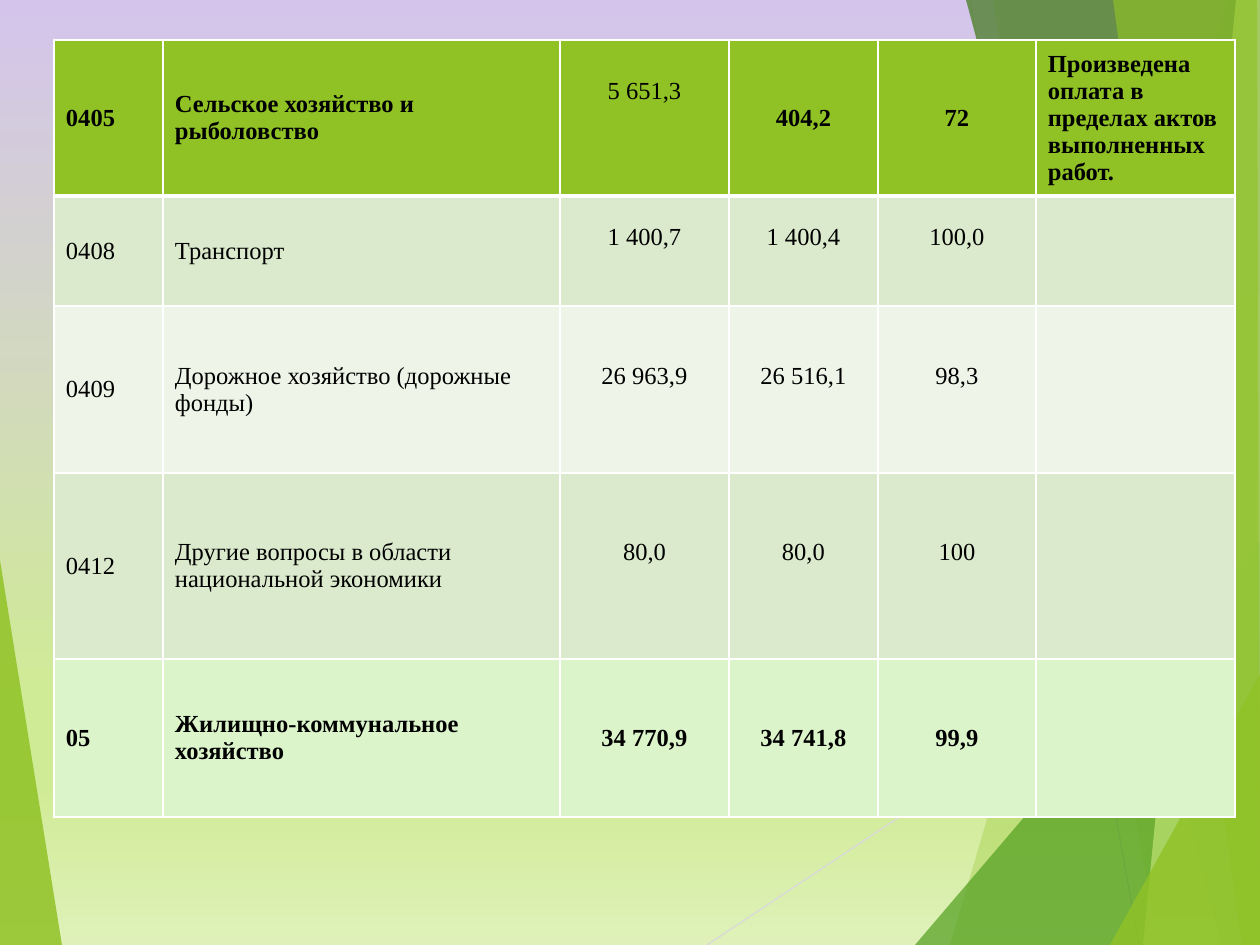
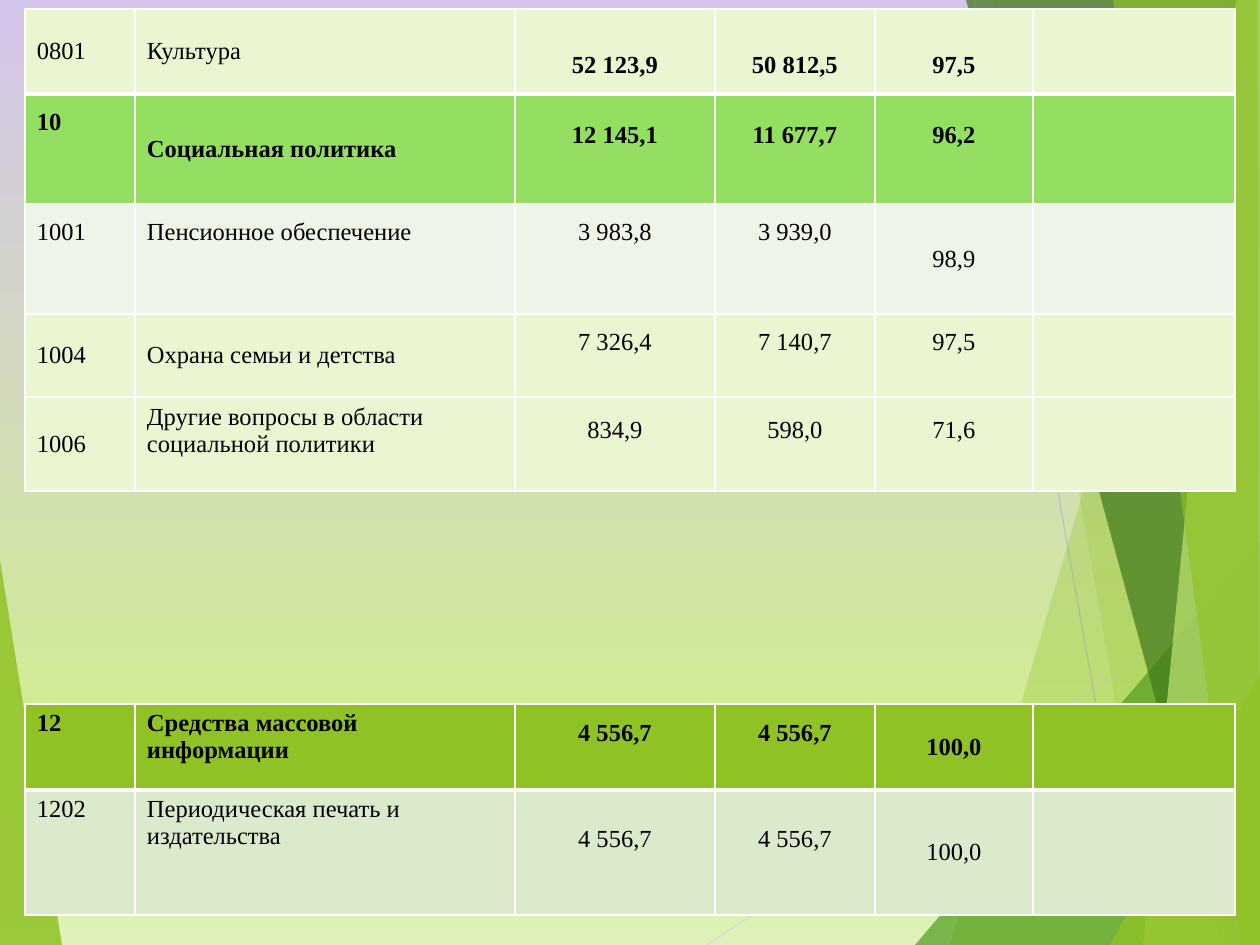
from typing import NamedTuple

from lxml.etree import SubElement
from pptx import Presentation
from pptx.dml.color import RGBColor
from pptx.enum.shapes import MSO_CONNECTOR as CONN
from pptx.enum.text import MSO_ANCHOR as ANCHOR, PP_ALIGN as ALIGN
from pptx.oxml.ns import qn
from pptx.slide import Slide
from pptx.table import _Cell as TableCell
from pptx.util import Pt

SCALE = 914400 / 126
WIDTH, HEIGHT = 1260, 945
FONT, FONT_SIZE = "Times New Roman", 14
HALF_LINE = 27
SIDE_PAD, NUMBER_PAD, VERTICAL_PAD, TOP_PAD = 12, 1, 4, 6
NUMBER_COLUMNS = range(2, 5)
COLORS = {
    "text": "000000",
    "border": "FFFFFF",
    "lime": "90C226",
    "green": "54A021",
    "forest": "3F7819",
    "light_lime": "C0E474",
    "bright": "94DE61",
    "sage": "DBE9CD",
    "mist": "EEF4E8",
    "mint": "DBF4CA",
    "cream": "EAF6D1",
    "line_light": "D9D9D9",
    "line_dark": "BFBFBF",
    "sky": "D4C4EC",
    "meadow": "D0EB96",
    "ground": "DFF1B9",
}
BACKDROP = [(0, "sky"), (74, "meadow"), (83, "meadow"), (100, "ground")]


class Facet(NamedTuple):
    """A translucent polygon of the decoration."""

    color: str
    alpha: int
    points: list[tuple[int, int]]


class Ray(NamedTuple):
    """A thin straight line of the decoration."""

    color: str
    start: tuple[int, int]
    end: tuple[int, int]


class Entry(NamedTuple):
    """Cell text, moved from the row's middle by half lines, or set at its top."""

    text: str
    shift: int = 0
    bold: bool = False
    at_top: bool = False


class Row(NamedTuple):
    """One table row."""

    height: int
    fill: str
    entries: list[Entry]


class Budget(NamedTuple):
    """A budget table with its place and column widths."""

    left: int
    top: int
    columns: list[int]
    rows: list[Row]


BOTTOM_RIGHT, TOP_RIGHT = (WIDTH, HEIGHT), (WIDTH, 0)
DECORATION = [
    Facet("lime", 85, [(0, 560), (62, HEIGHT), (0, HEIGHT)]),
    Ray("line_light", (707, HEIGHT), (WIDTH, 577)),
    Ray("line_dark", (970, 0), (1139, HEIGHT)),
    Facet("lime", 30, [(1228, 0), (950, HEIGHT), BOTTOM_RIGHT, TOP_RIGHT]),
    Facet("lime", 20, [(993, 0), (1158, HEIGHT), BOTTOM_RIGHT, TOP_RIGHT]),
    Facet("green", 72, [(915, HEIGHT), (WIDTH, 541), BOTTOM_RIGHT]),
    Facet("forest", 70, [(966, 0), (1222, HEIGHT), BOTTOM_RIGHT, TOP_RIGHT]),
    Facet("light_lime", 70, [(1236, 0), (1143, HEIGHT), BOTTOM_RIGHT, TOP_RIGHT]),
    Facet("lime", 65, [(1113, 0), (1242, HEIGHT), BOTTOM_RIGHT, (1257, 0)]),
    Facet("lime", 80, [(1110, HEIGHT), (WIDTH, 674), BOTTOM_RIGHT]),
]


def numbers(texts: str, shift: int = 0, bold: bool = False) -> list[Entry]:
    """Make plan, actual and percentage entries from texts split by semicolons."""
    return [Entry(text, shift, bold) for text in texts.split(";")]


ECONOMY = Budget(54, 40, [109, 397, 169, 149, 158, 199], [
    Row(156, "lime", [
        Entry("0405", bold=True), Entry("Сельское хозяйство и рыболовство", bold=True),
        Entry("5 651,3", -2), *numbers("404,2;72", bold=True),
        Entry("Произведена оплата в пределах актов выполненных работ.", bold=True)]),
    Row(110, "sage", [
        Entry("0408"), Entry("Транспорт"), *numbers("1 400,7;1 400,4;100,0", -1)]),
    Row(167, "mist", [
        Entry("0409"), Entry("Дорожное хозяйство (дорожные фонды)"),
        *numbers("26 963,9;26 516,1;98,3", -1)]),
    Row(186, "sage", [
        Entry("0412"), Entry("Другие вопросы в области национальной экономики"),
        *numbers("80,0;80,0;100", -1)]),
    Row(158, "mint", [
        Entry("05", bold=True), Entry("Жилищно-коммунальное хозяйство", bold=True),
        *numbers("34 770,9;34 741,8;99,9", bold=True)]),
])
SOCIAL_COLUMNS = [110, 380, 200, 160, 158, 202]
SOCIAL = Budget(25, 9, SOCIAL_COLUMNS, [
    Row(85, "cream", [
        Entry("0801"), Entry("Культура"),
        *numbers("52 123,9;50 812,5;97,5", 1, True)]),
    Row(110, "bright", [
        Entry("10", -2, True), Entry("Социальная политика", bold=True),
        *numbers("12 145,1;11 677,7;96,2", -1, True)]),
    Row(110, "mist", [
        Entry("1001", -2), Entry("Пенсионное обеспечение", -2),
        *numbers("3 983,8;3 939,0", -2), Entry("98,9")]),
    Row(83, "cream", [
        Entry("1004"), Entry("Охрана семьи и детства"),
        *numbers("7 326,4;7 140,7;97,5", -1)]),
    Row(94, "cream", [
        Entry("1006"), Entry("Другие вопросы в области социальной политики", -1),
        *numbers("834,9;598,0;71,6", -1)]),
])
MEDIA = Budget(25, 704, SOCIAL_COLUMNS, [
    Row(86, "lime", [
        Entry("12", bold=True, at_top=True),
        Entry("Средства массовой информации", bold=True, at_top=True),
        *numbers("4 556,7;4 556,7", -1, True), Entry("100,0", bold=True)]),
    Row(125, "sage", [
        Entry("1202", at_top=True),
        Entry("Периодическая печать и издательства", at_top=True),
        *numbers("4 556,7;4 556,7", -1), Entry("100,0")]),
])


def px(value: int) -> int:
    """Turn px into EMU."""
    return round(value * SCALE)


def rgb(name: str) -> RGBColor:
    """Look up a colour."""
    return RGBColor.from_string(COLORS[name])


def paint_backdrop(s: Slide) -> None:
    """Fill the slide with the vertical gradient."""
    fill = s.background.fill
    fill.gradient()
    fill.gradient_angle = 270
    stops = s._element.find(".//" + qn("a:gsLst"))
    for stop in list(stops):
        stops.remove(stop)
    for position, name in BACKDROP:
        stop = SubElement(stops, qn("a:gs"), pos=str(position * 1000))
        SubElement(stop, qn("a:srgbClr"), val=COLORS[name])


def draw_facet(s: Slide, facet: Facet) -> None:
    """Draw one translucent polygon."""
    builder = s.shapes.build_freeform(*facet.points[0], scale=SCALE)
    builder.add_line_segments(facet.points[1:], close=True)
    sp = builder.convert_to_shape()
    sp.shadow.inherit = False
    sp.line.fill.background()
    sp.fill.solid()
    sp.fill.fore_color.rgb = rgb(facet.color)
    color = sp._element.spPr.find(qn("a:solidFill")).find(qn("a:srgbClr"))
    SubElement(color, qn("a:alpha"), val=str(facet.alpha * 1000))


def draw_ray(s: Slide, ray: Ray) -> None:
    """Draw one thin line."""
    ends = [px(value) for value in (*ray.start, *ray.end)]
    line = s.shapes.add_connector(CONN.STRAIGHT, *ends)
    line.line.color.rgb = rgb(ray.color)
    line.line.width = Pt(0.75)
    SubElement(line._element.spPr, qn("a:effectLst"))


def set_borders(cell: TableCell, top: int, bottom: int) -> None:
    """Give the cell its border lines, in points."""
    tc_pr = cell._tc.get_or_add_tcPr()
    for side, width in (("L", 1), ("R", 1), ("T", top), ("B", bottom)):
        ln = SubElement(tc_pr, qn(f"a:ln{side}"), w=str(Pt(width)))
        fill = SubElement(ln, qn("a:solidFill"))
        SubElement(fill, qn("a:srgbClr"), val=COLORS["border"])


def write_entry(cell: TableCell, entry: Entry, is_number: bool) -> None:
    """Place an entry's text in its cell."""
    pad = TOP_PAD if entry.at_top else VERTICAL_PAD
    cell.vertical_anchor = ANCHOR.TOP if entry.at_top else ANCHOR.MIDDLE
    cell.margin_left = cell.margin_right = px(NUMBER_PAD if is_number else SIDE_PAD)
    cell.margin_top = px(pad + HALF_LINE * max(entry.shift, 0))
    cell.margin_bottom = px(pad + HALF_LINE * max(-entry.shift, 0))
    p = cell.text_frame.paragraphs[0]
    p.text = entry.text
    p.alignment = ALIGN.CENTER if is_number else ALIGN.LEFT
    p.font.name = FONT
    p.font.size = Pt(FONT_SIZE)
    p.font.bold = entry.bold
    p.font.color.rgb = rgb("text")


def draw_budget(s: Slide, budget: Budget) -> None:
    """Draw a budget table."""
    width, height = sum(budget.columns), sum(row.height for row in budget.rows)
    table = s.shapes.add_table(
        len(budget.rows), len(budget.columns),
        px(budget.left), px(budget.top), px(width), px(height)).table
    table.first_row = table.horz_banding = False
    for column, column_width in zip(table.columns, budget.columns):
        column.width = px(column_width)
    for i, row in enumerate(budget.rows):
        table.rows[i].height = px(row.height)
        for j in range(len(budget.columns)):
            cell = table.cell(i, j)
            set_borders(cell, 3 if i == 1 else 1, 3 if i == 0 else 1)
            cell.fill.solid()
            cell.fill.fore_color.rgb = rgb(row.fill)
            entry = row.entries[j] if j < len(row.entries) else Entry("")
            write_entry(cell, entry, j in NUMBER_COLUMNS)


def add_slide(prs: Presentation, budgets: list[Budget]) -> None:
    """Add a decorated slide with its tables."""
    s = prs.slides.add_slide(prs.slide_layouts[6])
    paint_backdrop(s)
    for item in DECORATION:
        if isinstance(item, Facet):
            draw_facet(s, item)
        else:
            draw_ray(s, item)
    for budget in budgets:
        draw_budget(s, budget)


def main() -> None:
    """Build the presentation."""
    prs = Presentation()
    prs.slide_width, prs.slide_height = px(WIDTH), px(HEIGHT)
    for budgets in ([ECONOMY], [SOCIAL, MEDIA]):
        add_slide(prs, budgets)
    prs.save("out.pptx")


if __name__ == "__main__":
    main()
